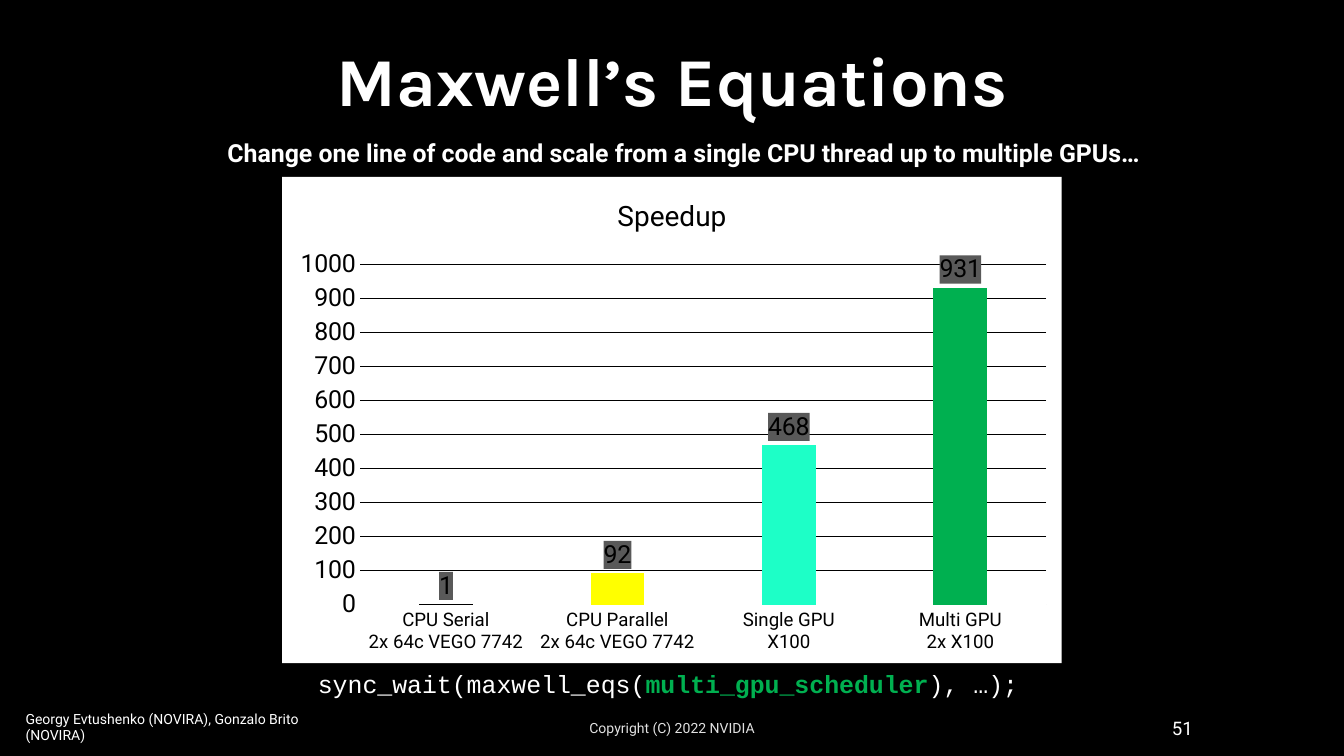
from dataclasses import dataclass

from lxml.etree import SubElement
from pptx import Presentation
from pptx.chart.data import CategoryChartData
from pptx.dml.color import RGBColor
from pptx.enum.chart import XL_CHART_TYPE as ChartType, XL_LABEL_POSITION as LabelPos
from pptx.enum.chart import XL_TICK_MARK as TickMark
from pptx.enum.text import MSO_ANCHOR as Anchor, MSO_AUTO_SIZE as AutoSize, PP_ALIGN as Align
from pptx.oxml import parse_xml
from pptx.oxml.ns import nsdecls, qn
from pptx.util import Inches, Pt

WIDTH, HEIGHT = Inches(12), Inches(6.75)
SANS, HEADING, MONO = "Roboto", "Karla", "Courier New"
BLACK, WHITE, GREEN, LABEL_GREY = "000000", "FFFFFF", "00B050", "595959"


@dataclass
class Area:
    """A box on a grid of 100 columns by 100 rows."""
    col: float
    row: float
    cols: float
    rows: float

    def box(self) -> tuple[int, int, int, int]:
        return (int(WIDTH * self.col / 100), int(HEIGHT * self.row / 100),
                int(WIDTH * self.cols / 100), int(HEIGHT * self.rows / 100))


@dataclass
class Run:
    text: str
    size: float
    font: str = SANS
    color: str = WHITE
    bold: bool = False


@dataclass
class Caption:
    area: Area
    runs: list[Run]
    align: Align = Align.CENTER
    anchor: Anchor = Anchor.MIDDLE
    wrap: bool = True
    grow: bool = False
    spacing: float = 1.0


@dataclass
class Bar:
    category: str
    speedup: int
    color: str


def rgb(color: str) -> RGBColor:
    return RGBColor.from_string(color)


def style_font(font, size: float, name: str, color: str, bold: bool = False) -> None:
    font.size, font.name, font.bold = Pt(size), name, bold
    font.color.rgb = rgb(color)


def fill_caption(shape, caption: Caption) -> None:
    shape.left, shape.top, shape.width, shape.height = caption.area.box()
    frame = shape.text_frame
    frame.word_wrap = caption.wrap
    frame.vertical_anchor = caption.anchor
    frame.auto_size = AutoSize.SHAPE_TO_FIT_TEXT if caption.grow else AutoSize.NONE
    paragraph = frame.paragraphs[0]
    paragraph.alignment, paragraph.line_spacing = caption.align, caption.spacing
    for part in caption.runs:
        run = paragraph.add_run()
        run.text = part.text
        style_font(run.font, part.size, part.font, part.color, part.bold)


def solid_area(color: str):
    return parse_xml(f'<c:spPr {nsdecls("c", "a")}><a:solidFill><a:srgbClr val="{color}"/>'
                     '</a:solidFill><a:ln><a:noFill/></a:ln></c:spPr>')


def place_plot(chart, **shares: float) -> None:
    """Fix the inner plot area as shares of the chart."""
    plot_area = chart.plots[0]._element.getparent()
    for old in plot_area.findall(qn("c:layout")):
        plot_area.remove(old)
    layout = parse_xml(f'<c:layout {nsdecls("c")}><c:manualLayout/></c:layout>')
    settings = {"layoutTarget": "inner", "xMode": "edge", "yMode": "edge", **shares}
    for key, value in settings.items():
        SubElement(layout[0], qn(f"c:{key}")).set("val", str(value))
    plot_area.insert(0, layout)


def draw_speedup(slide, area: Area, bars: list[Bar]) -> None:
    data = CategoryChartData(number_format="0")
    data.categories = [bar.category for bar in bars]
    data.add_series("Speedup", [bar.speedup for bar in bars])
    chart = slide.shapes.add_chart(ChartType.COLUMN_CLUSTERED, *area.box(), data).chart
    chart.has_legend = False
    style_font(chart.font, 16, SANS, BLACK)
    chart._chartSpace.find(qn("c:chart")).addnext(solid_area(WHITE))
    place_plot(chart, x=0.1, y=0.18, w=0.88, h=0.7)

    # Chart title
    chart.has_title = True
    heading = chart.chart_title.text_frame.paragraphs[0].add_run()
    heading.text = "Speedup"
    style_font(heading.font, 18, SANS, BLACK)
    chart.chart_title.include_in_layout = False

    # Axes
    for axis, size in ((chart.category_axis, 12), (chart.value_axis, 16)):
        axis.major_tick_mark = axis.minor_tick_mark = TickMark.NONE
        style_font(axis.tick_labels.font, size, SANS, BLACK)
    base_line = chart.category_axis.format.line
    base_line.color.rgb, base_line.width = rgb(WHITE), Pt(0.75)
    values = chart.value_axis
    values.minimum_scale, values.maximum_scale, values.major_unit = 0, 1000, 100
    values.tick_labels.number_format = "0"
    values.tick_labels.number_format_is_linked = False
    values.format.line.fill.background()
    values.has_major_gridlines = True
    grid_line = values.major_gridlines.format.line
    grid_line.color.rgb, grid_line.width = rgb(BLACK), Pt(0.75)

    # Bars and their labels
    plot = chart.plots[0]
    plot.gap_width, plot.overlap, plot.vary_by_categories = 219, -27, False
    series = plot.series[0]
    series.format.fill.solid()
    series.format.fill.fore_color.rgb = rgb("008564")
    for index, bar in enumerate(bars):
        fill = series.points[index].format.fill
        fill.solid()
        fill.fore_color.rgb = rgb(bar.color)
    labels = series.data_labels
    labels.show_value, labels.position = True, LabelPos.OUTSIDE_END
    labels.number_format, labels.number_format_is_linked = "#,##0", False
    style_font(labels.font, 16, SANS, BLACK)
    labels._element.find(qn("c:numFmt")).addnext(solid_area(LABEL_GREY))


TITLE = Caption(Area(4.58, 4.15, 90.92, 12.44),
                [Run("Maxwell’s Equations", 44, HEADING, bold=True)],
                anchor=Anchor.BOTTOM, grow=True)
FOOTER_ROW, FOOTER_ROWS = 93.63, 5.33
CAPTIONS = [
    # Page number
    Caption(Area(70.75, FOOTER_ROW, 18.83, FOOTER_ROWS), [Run("51", 12)], Align.RIGHT),
    # Copyright
    Caption(Area(33, FOOTER_ROW, 34, FOOTER_ROWS),
            [Run("Copyright (C) 2022 NVIDIA", 9, color="E1E1E1")]),
    # Code line
    Caption(Area(22.83, 87.7, 54.42, FOOTER_ROWS),
            [Run("sync_wait(maxwell_eqs(", 16, MONO),
             Run("multi_gpu_scheduler", 16, MONO, GREEN, True),
             Run("), …);", 16, MONO)],
            Align.LEFT, Anchor.TOP),
    # Subtitle
    Caption(Area(11.17, 17.93, 79.42, 5.04),
            [Run("Change one line of code and scale from a single CPU thread "
                 "up to multiple GPUs…", 16, bold=True)],
            grow=True, spacing=0.9),
    # Authors
    Caption(Area(1.08, 94.52, 26.17, 3.56),
            [Run("Georgy Evtushenko (NOVIRA), Gonzalo Brito (NOVIRA)", 9)],
            Align.LEFT, wrap=False, grow=True, spacing=0.9),
]
BARS = [
    Bar("CPU Serial\n2x 64c VEGO 7742", 1, BLACK),
    Bar("CPU Parallel\n2x 64c VEGO 7742", 92, "FFFF00"),
    Bar("Single GPU\nX100", 468, "1DFFC7"),
    Bar("Multi GPU\n2x X100", 931, GREEN),
]


def main() -> None:
    deck = Presentation()
    deck.slide_width, deck.slide_height = WIDTH, HEIGHT
    slide = deck.slides.add_slide(deck.slide_layouts[5])
    slide.background.fill.solid()
    slide.background.fill.fore_color.rgb = rgb(BLACK)

    fill_caption(slide.shapes.title, TITLE)
    draw_speedup(slide, Area(21, 23.41, 58, 64.3), BARS)
    for caption in CAPTIONS:
        fill_caption(slide.shapes.add_textbox(*caption.area.box()), caption)
    deck.save("out.pptx")


if __name__ == "__main__":
    main()
